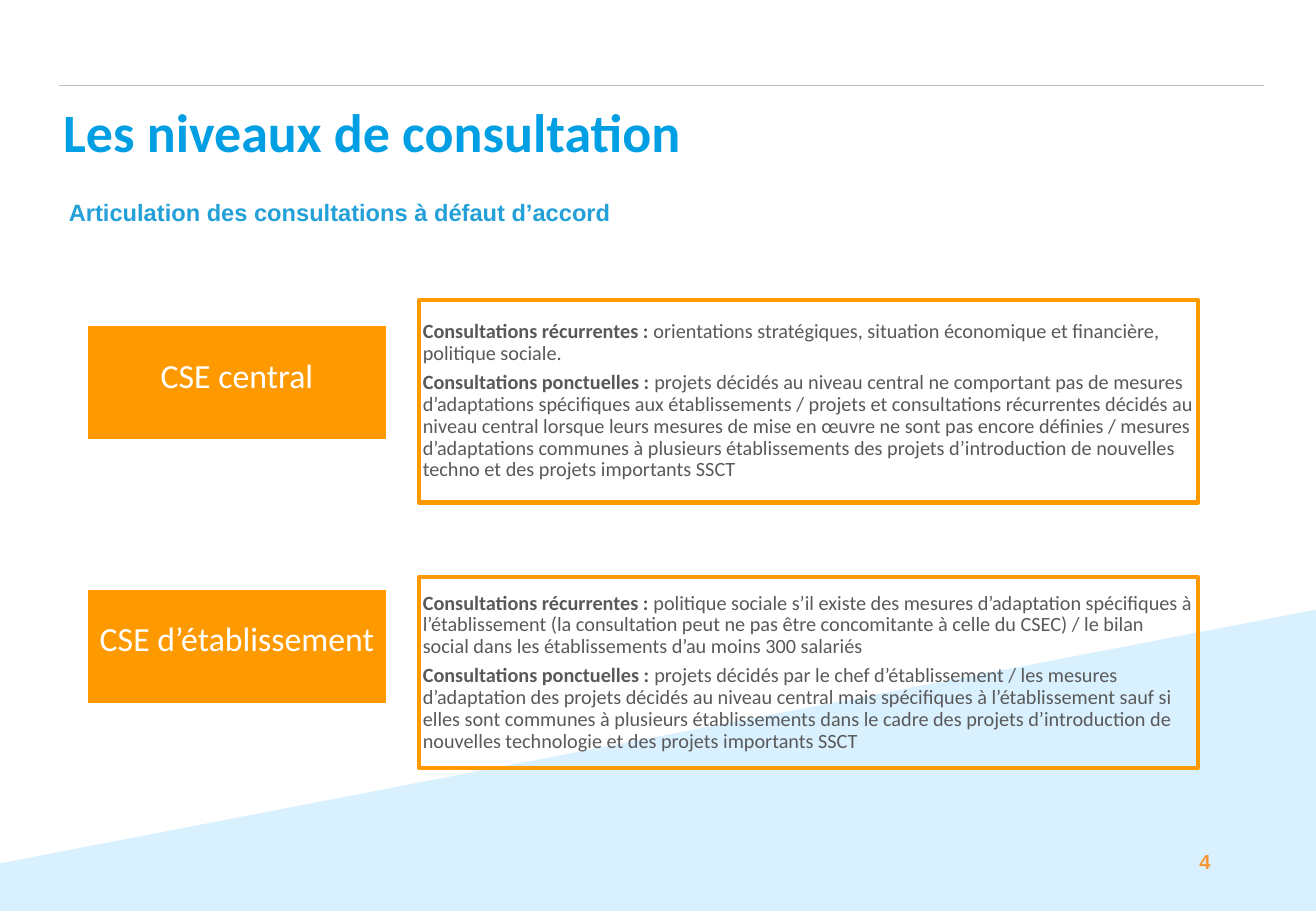
from dataclasses import dataclass

from lxml import etree
from pptx import Presentation
from pptx import util as u
from pptx.dml.color import RGBColor
from pptx.enum import shapes, text
from pptx.oxml import ns

BLUE = RGBColor(0x00, 0x9F, 0xE3)
SUBTITLE_BLUE = RGBColor(0x24, 0xA0, 0xD8)
PALE_BLUE = RGBColor(0xD9, 0xF0, 0xFF)
ORANGE = RGBColor(0xFF, 0x99, 0x00)
NUMBER_ORANGE = RGBColor(0xF7, 0x97, 0x33)
GREY = RGBColor(0x59, 0x59, 0x59)
RULE_GREY = RGBColor(0xBF, 0xBF, 0xBF)
WHITE = RGBColor(0xFF, 0xFF, 0xFF)

LABEL_LEFT, LABEL_WIDTH, LABEL_HEIGHT = 1.83, 6.25, 2.39
DETAIL_LEFT, DETAIL_WIDTH = 8.76, 16.28


@dataclass
class Level:
    label: str
    label_top: float
    detail_top: float
    detail_height: float
    recurring: str
    occasional: str


LEVELS = [
    Level(
        "CSE central", 6.81, 6.27, 4.24,
        "orientations stratégiques, situation économique et financière, politique sociale.",
        "projets décidés au niveau central ne comportant pas de mesures d’adaptations "
        "spécifiques aux établissements / projets et consultations récurrentes décidés au "
        "niveau central lorsque leurs mesures de mise en œuvre ne sont pas encore définies / "
        "mesures d’adaptations communes à plusieurs établissements des projets "
        "d’introduction de nouvelles techno et des projets importants SSCT",
    ),
    Level(
        "CSE d’établissement", 12.32, 12.07, 3.99,
        "politique sociale s’il existe des mesures d’adaptation spécifiques à "
        "l’établissement (la consultation peut ne pas être concomitante à celle du CSEC) / "
        "le bilan social dans les établissements d’au moins 300 salariés",
        "projets décidés par le chef d’établissement / les mesures d’adaptation des projets "
        "décidés au niveau central mais spécifiques à l’établissement sauf si elles sont "
        "communes à plusieurs établissements dans le cadre des projets d’introduction de "
        "nouvelles technologie et des projets importants SSCT",
    ),
]


def style(r, name: str, size: float, color: RGBColor, bold: bool = False) -> None:
    r.font.name = name
    r.font.size = u.Pt(size)
    r.font.color.rgb = color
    r.font.bold = bold


def set_margins(tf, left: float, top: float, right: float, bottom: float) -> None:
    tf.margin_left, tf.margin_top = u.Cm(left), u.Cm(top)
    tf.margin_right, tf.margin_bottom = u.Cm(right), u.Cm(bottom)


def set_spacing(p, align) -> None:
    p.alignment = align
    p.line_spacing = 0.9
    p.space_after = u.Pt(4.2)


def add_rule(s) -> None:
    rule = s.shapes.add_connector(
        shapes.MSO_CONNECTOR.STRAIGHT, u.Cm(1.24), u.Cm(1.78), u.Cm(26.42), u.Cm(1.78))
    rule.line.color.rgb = RULE_GREY
    rule.line.width = u.Pt(0.5)
    etree.SubElement(rule._element.spPr, ns.qn("a:effectLst"))


def add_wedge(s) -> None:
    builder = s.shapes.build_freeform(u.Cm(-0.03), u.Cm(18.06))
    corners = [(-0.03, 19.05), (27.51, 19.05), (27.51, 12.75)]
    builder.add_line_segments([(u.Cm(x), u.Cm(y)) for x, y in corners], close=True)
    sp = builder.convert_to_shape()
    sp.shadow.inherit = False
    sp.fill.solid()
    sp.fill.fore_color.rgb = PALE_BLUE
    sp.line.fill.background()


def add_title(s) -> None:
    sp = s.shapes.title
    sp.left, sp.top, sp.width, sp.height = u.Cm(1.32), u.Cm(2.21), u.Cm(23.5), u.Cm(1.22)
    tf = sp.text_frame
    tf.text = "Les niveaux de consultation"
    tf.auto_size = text.MSO_AUTO_SIZE.NONE
    tf.vertical_anchor = text.MSO_ANCHOR.MIDDLE
    set_margins(tf, 0, 0, 0, 0)
    p = tf.paragraphs[0]
    p.alignment = text.PP_ALIGN.LEFT
    p.line_spacing = 0.9
    style(p.runs[0], "Calibri", 32, BLUE, True)


def add_caption(s, content: str, left: float, top: float, width: float, height: float,
                size: float, color: RGBColor, align):
    sp = s.shapes.add_textbox(u.Cm(left), u.Cm(top), u.Cm(width), u.Cm(height))
    tf = sp.text_frame
    tf.text = content
    tf.word_wrap = False
    p = tf.paragraphs[0]
    p.alignment = align
    style(p.runs[0], "Arial", size, color, True)
    return tf


def add_box(s, left: float, top: float, width: float, height: float,
            line: RGBColor, weight: float):
    sp = s.shapes.add_shape(
        shapes.MSO_SHAPE.RECTANGLE, u.Cm(left), u.Cm(top), u.Cm(width), u.Cm(height))
    sp.shadow.inherit = False
    sp.fill.background()
    sp.line.color.rgb = line
    sp.line.width = u.Pt(weight)
    sp.text_frame.word_wrap = True
    sp.text_frame.vertical_anchor = text.MSO_ANCHOR.MIDDLE
    return sp


def add_detail(s, level: Level) -> None:
    sp = add_box(s, DETAIL_LEFT, level.detail_top, DETAIL_WIDTH, level.detail_height,
                 ORANGE, 2.5)
    tf = sp.text_frame
    set_margins(tf, 0.08, 0.03, 0.08, 0.03)
    entries = [("Consultations récurrentes : ", level.recurring),
               ("Consultations ponctuelles : ", level.occasional)]
    for i, entry in enumerate(entries):
        p = tf.add_paragraph() if i else tf.paragraphs[0]
        set_spacing(p, text.PP_ALIGN.LEFT)
        for content, bold in zip(entry, (True, False)):
            r = p.add_run()
            r.text = content
            style(r, "Calibri", 12, GREY, bold)


def add_label(s, level: Level) -> None:
    sp = add_box(s, LABEL_LEFT, level.label_top, LABEL_WIDTH, LABEL_HEIGHT, WHITE, 1)
    sp.fill.solid()
    sp.fill.fore_color.rgb = ORANGE
    tf = sp.text_frame
    tf.text = level.label
    set_margins(tf, 0.03, 0.03, 0.03, 0.25)
    p = tf.paragraphs[0]
    set_spacing(p, text.PP_ALIGN.CENTER)
    style(p.runs[0], "Calibri", 20, WHITE)


def main() -> None:
    prs = Presentation()
    prs.slide_width, prs.slide_height = u.Cm(27.51), u.Cm(19.05)
    s = prs.slides.add_slide(prs.slide_layouts.get_by_name("Title Only"))
    add_rule(s)
    add_wedge(s)
    add_title(s)
    number = add_caption(s, "4", 24.82, 17.63, 0.74, 0.76, 12, NUMBER_ORANGE,
                         text.PP_ALIGN.CENTER)
    set_margins(number, 0.13, 0.13, 0.13, 0.13)
    add_caption(s, "Articulation des consultations à défaut d’accord",
                1.19, 4.01, 11.89, 0.86, 14, SUBTITLE_BLUE, text.PP_ALIGN.LEFT)
    for level in LEVELS:
        add_detail(s, level)
        add_label(s, level)
    prs.save("out.pptx")


if __name__ == "__main__":
    main()
